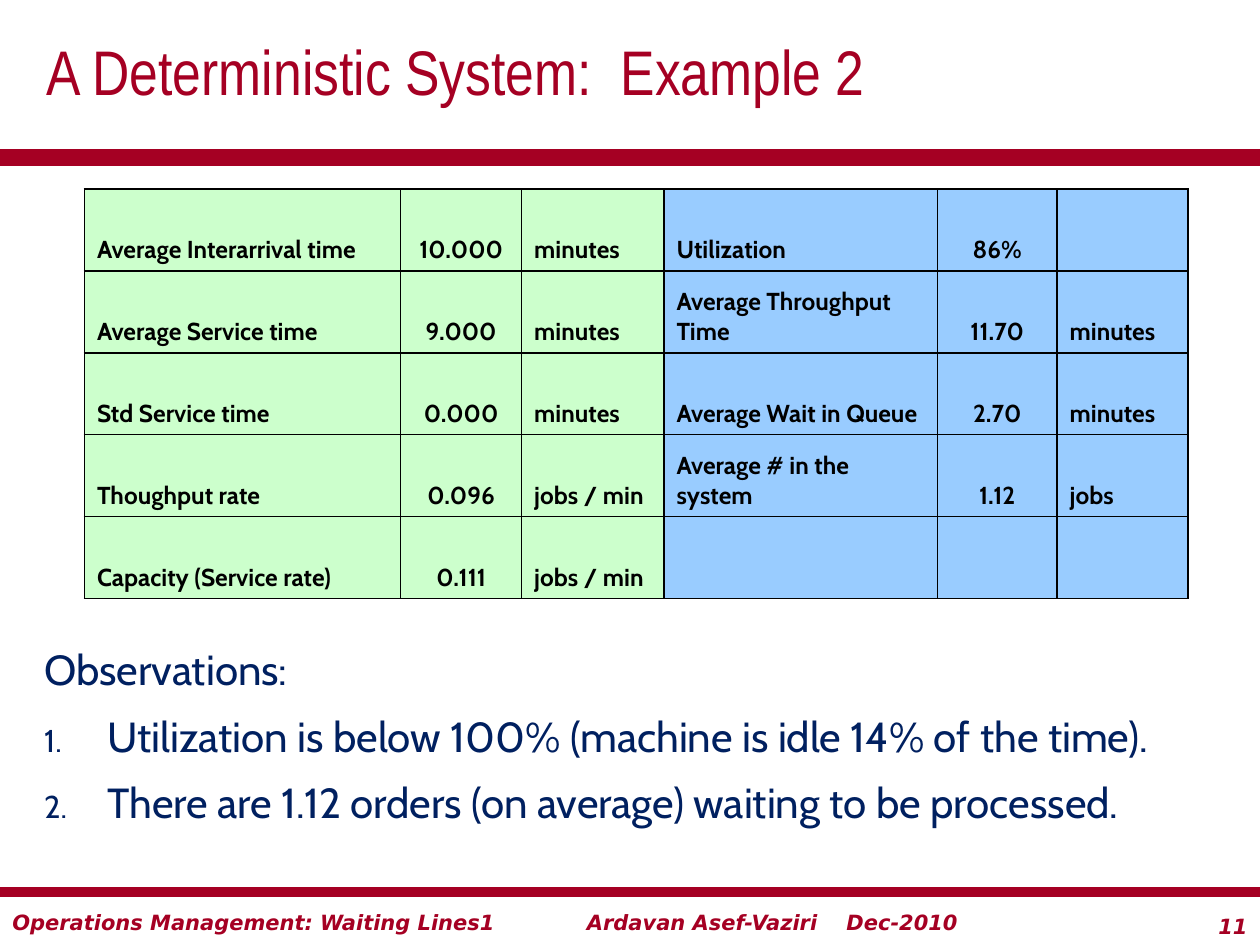
from lxml import etree
from pptx import Presentation, util as u
from pptx.dml.color import RGBColor
from pptx.enum import shapes, text
from pptx.oxml.ns import qn

RED = RGBColor(0xA5, 0x00, 0x23)
NAVY = RGBColor(0x00, 0x20, 0x60)
BLACK = RGBColor(0, 0, 0)
GREEN = RGBColor(0xCC, 0xFF, 0xCC)
BLUE = RGBColor(0x99, 0xCC, 0xFF)

COLS = [2.51, 0.96, 1.13, 2.17, 0.95, 1.04]
ROWS = [
    ["Average Interarrival time", "10.000", "minutes", "Utilization", "86%", ""],
    ["Average Service time", "9.000", "minutes",
     "Average Throughput Time", "11.70", "minutes"],
    ["Std Service time", "0.000", "minutes",
     "Average Wait in Queue", "2.70", "minutes"],
    ["Thoughput rate", "0.096", "jobs / min",
     "Average # in the system", "1.12", "jobs"],
    ["Capacity (Service rate)", "0.111", "jobs / min", "", "", ""],
]
NOTES = [
    "Observations:",
    "Utilization is below 100% (machine is idle 14% of the time).",
    "There are 1.12 orders (on average) waiting to be processed.",
]


def add(parent, tag, **attrs):
    return etree.SubElement(parent, qn(tag), attrs)


class Page:
    """The slide being built, with its text, line and table styles."""

    def __init__(self, slide):
        self.slide = slide

    def font(self, para, name, size, color, bold=False, italic=False):
        font = para.font
        font.name, font.size = name, u.Pt(size)
        font.bold, font.italic = bold, italic
        font.color.rgb = color

    def place(self, shape, left, top, width, height):
        shape.left, shape.top = u.Inches(left), u.Inches(top)
        shape.width, shape.height = u.Inches(width), u.Inches(height)
        shape.text_frame.auto_size = text.MSO_AUTO_SIZE.NONE

    def title(self, words):
        shape = self.slide.shapes.title
        self.place(shape, 0.27, 0, 9.73, 1.11)
        frame = shape.text_frame
        frame.text = words
        frame.vertical_anchor = text.MSO_ANCHOR.MIDDLE
        para = frame.paragraphs[0]
        para.alignment = text.PP_ALIGN.LEFT
        self.font(para, "Arial Narrow", 36, RED)

    def notes(self, lines):
        """Fill the body with a heading line and a numbered list."""
        shape = self.slide.placeholders[1]
        self.place(shape, 0.25, 5, 9.75, 1.75)
        frame = shape.text_frame
        frame.text = "\n".join(lines)
        for i, para in enumerate(frame.paragraphs):
            para.line_spacing = 1.15
            para.space_before = u.Pt(4.8)
            props = para._p.get_or_add_pPr()
            props.set("marL", str(u.Inches(0.5)))
            props.set("indent", str(u.Inches(-0.5)))
            if i:
                add(props, "a:buSzPct", val="75000")
                add(props, "a:buFont", typeface="+mj-lt")
                add(props, "a:buAutoNum", type="arabicPeriod")
            else:
                add(props, "a:buNone")
            self.font(para, "Cabin", 24, NAVY)

    def line(self, top, width):
        y = u.Inches(top)
        rule = self.slide.shapes.add_connector(
            shapes.MSO_CONNECTOR.STRAIGHT, 0, y, u.Inches(10), y)
        rule.line.color.rgb = RED
        rule.line.width = u.Pt(width)
        add(rule._element.spPr, "a:effectLst")

    def label(self, words, left, top, width, align=text.PP_ALIGN.LEFT, tab=None):
        box = self.slide.shapes.add_textbox(
            u.Inches(left), u.Inches(top), u.Inches(width), u.Inches(0.3))
        frame = box.text_frame
        frame.word_wrap = True
        frame.text = words
        para = frame.paragraphs[0]
        para.alignment = align
        if tab:
            stops = add(para._p.get_or_add_pPr(), "a:tabLst")
            add(stops, "a:tab", pos=str(u.Inches(tab)), algn="l")
        self.font(para, "DejaVu Sans", 12, RED, bold=True, italic=True)

    def border(self, cell):
        props = cell._tc.get_or_add_tcPr()
        for side in "LRTB":
            edge = add(props, "a:ln" + side, w=str(u.Pt(1)))
            fill = add(edge, "a:solidFill")
            add(fill, "a:srgbClr", val=str(BLACK))

    def table(self, left, top, cols, rows, height):
        grid = self.slide.shapes.add_table(
            len(rows), len(cols), u.Inches(left), u.Inches(top),
            u.Inches(sum(cols)), u.Inches(height * len(rows))).table
        for col, width in zip(grid.columns, cols):
            col.width = u.Inches(width)
        for r, row in enumerate(rows):
            for c, words in enumerate(row):
                cell = grid.cell(r, c)
                self.border(cell)
                cell.fill.solid()
                cell.fill.fore_color.rgb = GREEN if c < 3 else BLUE
                cell.vertical_anchor = text.MSO_ANCHOR.BOTTOM
                cell.text = words
                para = cell.text_frame.paragraphs[0]
                if c % 3 == 1:
                    para.alignment = text.PP_ALIGN.CENTER
                self.font(para, "Cabin", 14, BLACK, bold=True)


def main():
    deck = Presentation()
    deck.slide_width, deck.slide_height = u.Inches(10), u.Inches(7.5)
    page = Page(deck.slides.add_slide(deck.slide_layouts[1]))
    page.label("11", 9.25, 7.2, 0.75, align=text.PP_ALIGN.RIGHT)
    page.label("Ardavan Asef-Vaziri\tDec-2010", 4.56, 7.17, 3.35, tab=2.06)
    page.label("Operations Management: Waiting Lines1", 0, 7.17, 4.67)
    page.line(1.25, 10)
    page.line(7.08, 6)
    page.notes(NOTES)
    page.title("A Deterministic System:  Example 2")
    page.table(0.67, 1.5, COLS, ROWS, 0.65)
    deck.save("out.pptx")


if __name__ == "__main__":
    main()
